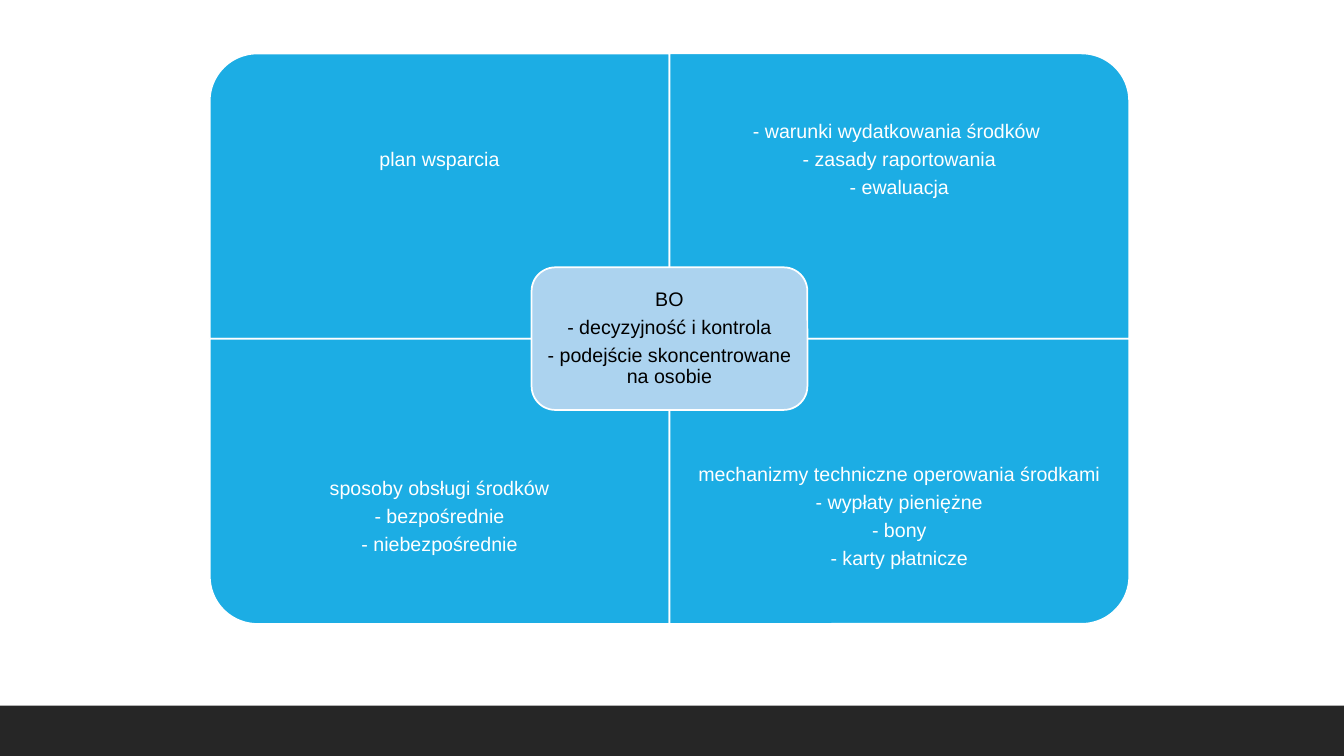
from dataclasses import dataclass

from pptx import Presentation
from pptx.dml.color import RGBColor
from pptx.enum.shapes import MSO_SHAPE
from pptx.enum.text import MSO_ANCHOR, PP_ALIGN
from pptx.util import Inches, Pt

RECT = MSO_SHAPE.RECTANGLE
ROUND_ONE = MSO_SHAPE.ROUND_1_RECTANGLE
ROUND_ALL = MSO_SHAPE.ROUNDED_RECTANGLE
MIDDLE = MSO_ANCHOR.MIDDLE
CENTER = PP_ALIGN.CENTER

SLIDE_W, SLIDE_H = 13.33, 7.5


@dataclass(frozen=True)
class Theme:
    font: str = "Arial"
    size: float = 14
    space_after: float = 5
    line_spacing: float = 0.9
    line_width: float = 1.25
    quadrant: str = "1CADE4"
    core: str = "ACD3EF"
    footer: str = "262626"
    light: str = "FFFFFF"
    dark: str = "000000"


@dataclass(frozen=True)
class Grid:
    """Two by two matrix; positions and sizes count columns and rows."""
    left: float = 2.08
    top: float = 0.53
    col_w: float = 4.56
    row_h: float = 2.83

    def box(self, col, row, cols, rows):
        return (self.left + col * self.col_w, self.top + row * self.row_h,
                cols * self.col_w, rows * self.row_h)


class MatrixSlide:
    def __init__(self, slide, theme, grid):
        self.slide, self.theme, self.grid = slide, theme, grid

    def shape(self, kind, box, fill, line=None, rotation=0):
        x, y, w, h = box
        if rotation % 180:  # a quarter turn swaps the sides around the centre
            x, y, w, h = x + (w - h) / 2, y + (h - w) / 2, h, w
        sp = self.slide.shapes.add_shape(
            kind, Inches(x), Inches(y), Inches(w), Inches(h))
        sp.rotation = rotation
        sp.shadow.inherit = False
        sp.fill.solid()
        sp.fill.fore_color.rgb = RGBColor.from_string(fill)
        if line:
            sp.line.color.rgb = RGBColor.from_string(line)
            sp.line.width = Pt(self.theme.line_width)
        else:
            sp.line.fill.background()
        return sp

    def text(self, sp, lines, color, inset):
        tf = sp.text_frame
        tf.word_wrap = True
        tf.vertical_anchor = MIDDLE
        tf.margin_left = tf.margin_right = Inches(inset)
        tf.margin_top = tf.margin_bottom = Inches(inset)
        for i, line in enumerate(lines):
            p = tf.add_paragraph() if i else tf.paragraphs[0]
            p.alignment = CENTER
            p.line_spacing = self.theme.line_spacing
            p.space_after = Pt(self.theme.space_after)
            r = p.add_run()
            r.text = line
            r.font.name = self.theme.font
            r.font.size = Pt(self.theme.size)
            r.font.color.rgb = RGBColor.from_string(color)

    def footer(self, share):
        box = (0, SLIDE_H * (1 - share), SLIDE_W, SLIDE_H * share)
        self.shape(RECT, box, self.theme.footer)

    def quadrant(self, col, row, rotation, lines):
        t = self.theme
        self.shape(ROUND_ONE, self.grid.box(col, row, 1, 1),
                   t.quadrant, t.light, rotation)
        # The text keeps to the outer three quarters, clear of the core
        x, y, w, h = self.grid.box(col, row * 1.25, 1, 0.75)
        tb = self.slide.shapes.add_textbox(
            Inches(x), Inches(y), Inches(w), Inches(h))
        self.text(tb, lines, t.light, 0.11)

    def core(self, lines):
        t = self.theme
        sp = self.shape(ROUND_ALL, self.grid.box(0.7, 0.75, 0.6, 0.5),
                        t.core, t.light)
        self.text(sp, lines, t.dark, 0.06)


# Column, row, rotation that turns the round corner outwards, text
QUADRANTS = [
    (0, 0, 270, ["plan wsparcia"]),
    (1, 0, 0, ["- warunki wydatkowania środków ",
               "- zasady raportowania",
               "- ewaluacja"]),
    (0, 1, 180, ["sposoby obsługi środków",
                 "- bezpośrednie",
                 "- niebezpośrednie"]),
    (1, 1, 90, ["mechanizmy techniczne operowania środkami",
                "- wypłaty pieniężne",
                "- bony",
                "- karty płatnicze"]),
]
CORE = ["BO", "- decyzyjność i kontrola", "- podejście skoncentrowane na osobie"]


def main():
    prs = Presentation()
    prs.slide_width, prs.slide_height = Inches(SLIDE_W), Inches(SLIDE_H)
    blank = prs.slide_layouts[6]
    s = MatrixSlide(prs.slides.add_slide(blank), Theme(), Grid())

    # Footer band
    s.footer(1 / 15)

    # Four quadrants, then the core on top
    for col, row, rotation, lines in QUADRANTS:
        s.quadrant(col, row, rotation, lines)
    s.core(CORE)

    prs.save("out.pptx")


if __name__ == "__main__":
    main()
